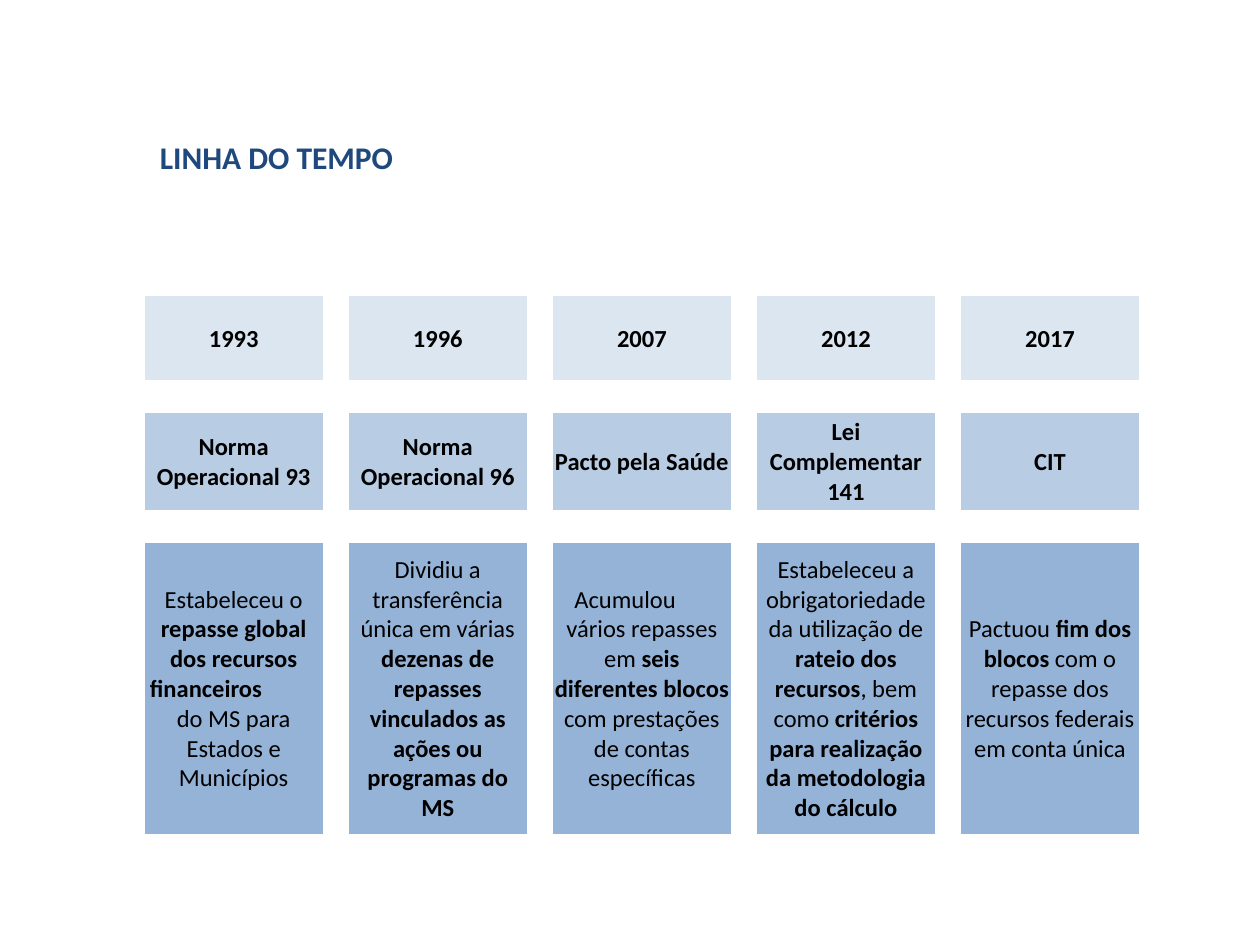
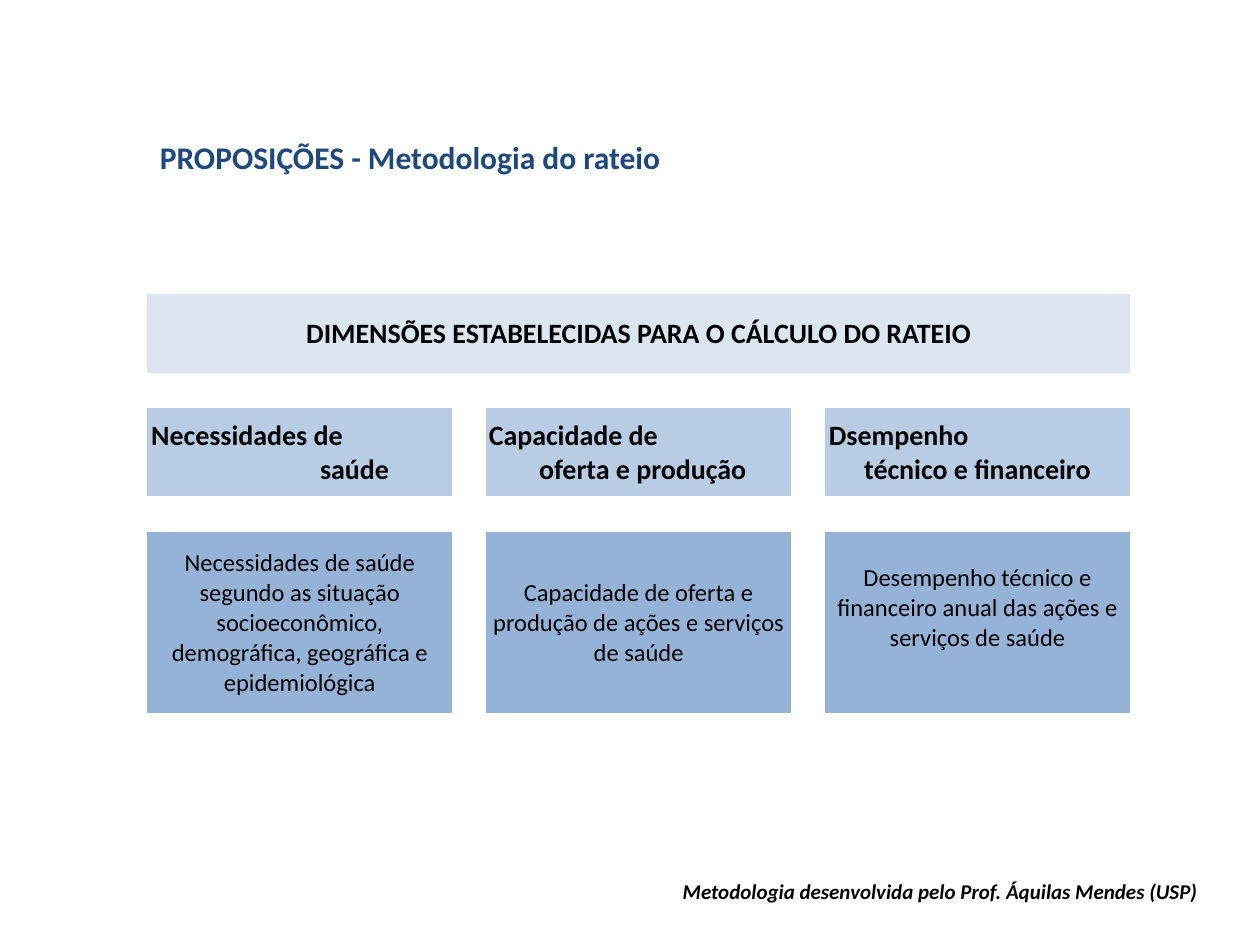
from itertools import chain

from lxml.etree import SubElement
from pptx import Presentation
from pptx.dml.color import RGBColor
from pptx.enum.text import MSO_ANCHOR, PP_ALIGN
from pptx.oxml.ns import qn
from pptx.util import Inches, Pt

FONT = "Calibri"
NAVY, BLACK = "1F497D", "000000"
BANDS = ("DCE6F1", "B8CCE4", "95B3D7")
PLAIN_TABLE = "{2D5ABB26-0587-4C30-8999-92F81FD0307C}"

YEARS = ("1993", "1996", "2007", "2012", "2017")
MILESTONES = ("Norma Operacional 93", "Norma Operacional 96", "Pacto pela Saúde",
              "Lei Complementar 141", "CIT")
# Each entry is a list of paragraphs; (indent, text) is a left-aligned one.
CHANGES = (
    ["Estabeleceu o", "**repasse global**", "**dos recursos**",
     (0.03, "**financeiros**"), "do MS para Estados e Municípios"],
    ["Dividiu a transferência", "única em várias "
     "**dezenas de repasses vinculados as ações ou programas do MS**"],
    [(0.16, "Acumulou"), "vários repasses em **seis diferentes blocos **"
     "com prestações de contas específicas"],
    ["Estabeleceu a obrigatoriedade", "da utilização de **rateio dos recursos**, "
     "bem como **critérios para realização da metodologia do cálculo**"],
    ["Pactuou **fim dos blocos **com o repasse dos recursos federais em conta única"],
)

DIMENSIONS = (
    [(0.02, "Necessidades de"), (1.36, "saúde")],
    [(0.01, "Capacidade de"), (0.41, "oferta e produção")],
    [(0.02, "Dsempenho"), (0.3, "técnico e financeiro")],
)
DETAILS = (
    ["Necessidades de saúde segundo as situação socioeconômico, "
     "demográfica, geográfica e epidemiológica"],
    ["Capacidade de oferta e produção de ações e serviços de saúde"],
    ["Desempenho técnico e financeiro anual das ações e serviços de saúde"],
)


def rgb(value):
    return RGBColor.from_string(value)


def spaced(size, gap, count):
    """Sizes of equal tracks with a gap track between neighbours."""
    return list(chain.from_iterable((size, gap) for _ in range(count)))[:-1]


class Deck:
    def __init__(self):
        self.prs = Presentation()
        self.prs.slide_width, self.prs.slide_height = Inches(10), Inches(7.5)

    def add_slide(self, title, title_width):
        self.s = self.prs.slides.add_slide(self.prs.slide_layouts[6])
        self.text(title, 1.17, 1.05, title_width, 0.4, 18, NAVY)

    def run(self, p, text, size, color=BLACK, bold=True, italic=False):
        r = p.add_run()
        r.text = text
        r.font.name, r.font.size = FONT, Pt(size)
        r.font.bold, r.font.italic = bold, italic
        r.font.color.rgb = rgb(color)

    def text(self, text, x, y, w, h, size, color=BLACK, italic=False, wrap=True):
        box = self.s.shapes.add_textbox(Inches(x), Inches(y), Inches(w), Inches(h))
        box.text_frame.word_wrap = wrap
        self.run(box.text_frame.paragraphs[0], text, size, color, italic=italic)

    def table(self, x, y, widths, heights):
        """Add an unstyled table whose cells all start out empty and unfilled."""
        frame = self.s.shapes.add_table(
            len(heights), len(widths), Inches(x), Inches(y),
            Inches(sum(widths)), Inches(sum(heights)))
        tbl = frame.table
        tbl.first_row = tbl.horz_banding = False
        tbl._tbl.tblPr.find(qn("a:tableStyleId")).text = PLAIN_TABLE
        for column, width in zip(tbl.columns, widths):
            column.width = Inches(width)
        for row, height in zip(tbl.rows, heights):
            row.height = Inches(height)
        for cell in tbl.iter_cells():
            cell.fill.background()
            cell.vertical_anchor = MSO_ANCHOR.MIDDLE
            cell.margin_left = cell.margin_right = cell.margin_top = Inches(0.01)
            cell.margin_bottom = 0
            # Small empty text keeps the gap rows from growing
            SubElement(cell.text_frame.paragraphs[0]._p, qn("a:endParaRPr"), sz="800")
        return tbl

    def cell(self, cell, paragraphs, fill, size, bold=False):
        """Fill a cell; **marked** parts of a paragraph are bold."""
        cell.fill.solid()
        cell.fill.fore_color.rgb = rgb(fill)
        tf = cell.text_frame
        for i, item in enumerate(paragraphs):
            p = tf.paragraphs[0] if i == 0 else tf.add_paragraph()
            p.alignment = PP_ALIGN.CENTER
            if isinstance(item, tuple):
                indent, item = item
                p.alignment = PP_ALIGN.LEFT
                p._p.get_or_add_pPr().set("marL", str(Inches(indent)))
            for n, part in enumerate(item.split("**")):
                if part:
                    self.run(p, part, size, bold=bold or n % 2 == 1)

    def band(self, tbl, row, entries, size, bold=False):
        """Fill every second cell of a row, leaving the gap columns empty."""
        for i, entry in enumerate(entries):
            paragraphs = [entry] if isinstance(entry, str) else entry
            self.cell(tbl.cell(row, 2 * i), paragraphs, BANDS[row // 2], size, bold)


def add_timeline(deck):
    deck.add_slide("LINHA DO TEMPO", 5.31)
    tbl = deck.table(1.15, 2.35, spaced(1.41, 0.21, len(YEARS)),
                     [0.67, 0.26, 0.77, 0.26, 2.31])
    deck.band(tbl, 0, YEARS, 14, bold=True)
    deck.band(tbl, 2, MILESTONES, 14, bold=True)
    deck.band(tbl, 4, CHANGES, 14)


def add_proposals(deck):
    deck.add_slide("PROPOSIÇÕES - Metodologia do rateio", 6.64)
    tbl = deck.table(1.17, 2.33, spaced(2.42, 0.27, len(DIMENSIONS)),
                     [0.63, 0.28, 0.7, 0.28, 1.44])
    tbl.cell(0, 0).merge(tbl.cell(0, 4))
    deck.band(tbl, 0, ["DIMENSÕES ESTABELECIDAS PARA O CÁLCULO DO RATEIO"], 16, bold=True)
    deck.band(tbl, 2, DIMENSIONS, 16, bold=True)
    deck.band(tbl, 4, DETAILS, 14)
    tbl.cell(4, 4).margin_bottom = Inches(0.24)
    deck.text("Metodologia desenvolvida pelo Prof. Áquilas Mendes (USP)",
              5.32, 6.92, 4.4, 0.3, 12, italic=True, wrap=False)


def main():
    deck = Deck()
    add_timeline(deck)
    add_proposals(deck)
    deck.prs.save("out.pptx")


if __name__ == "__main__":
    main()
